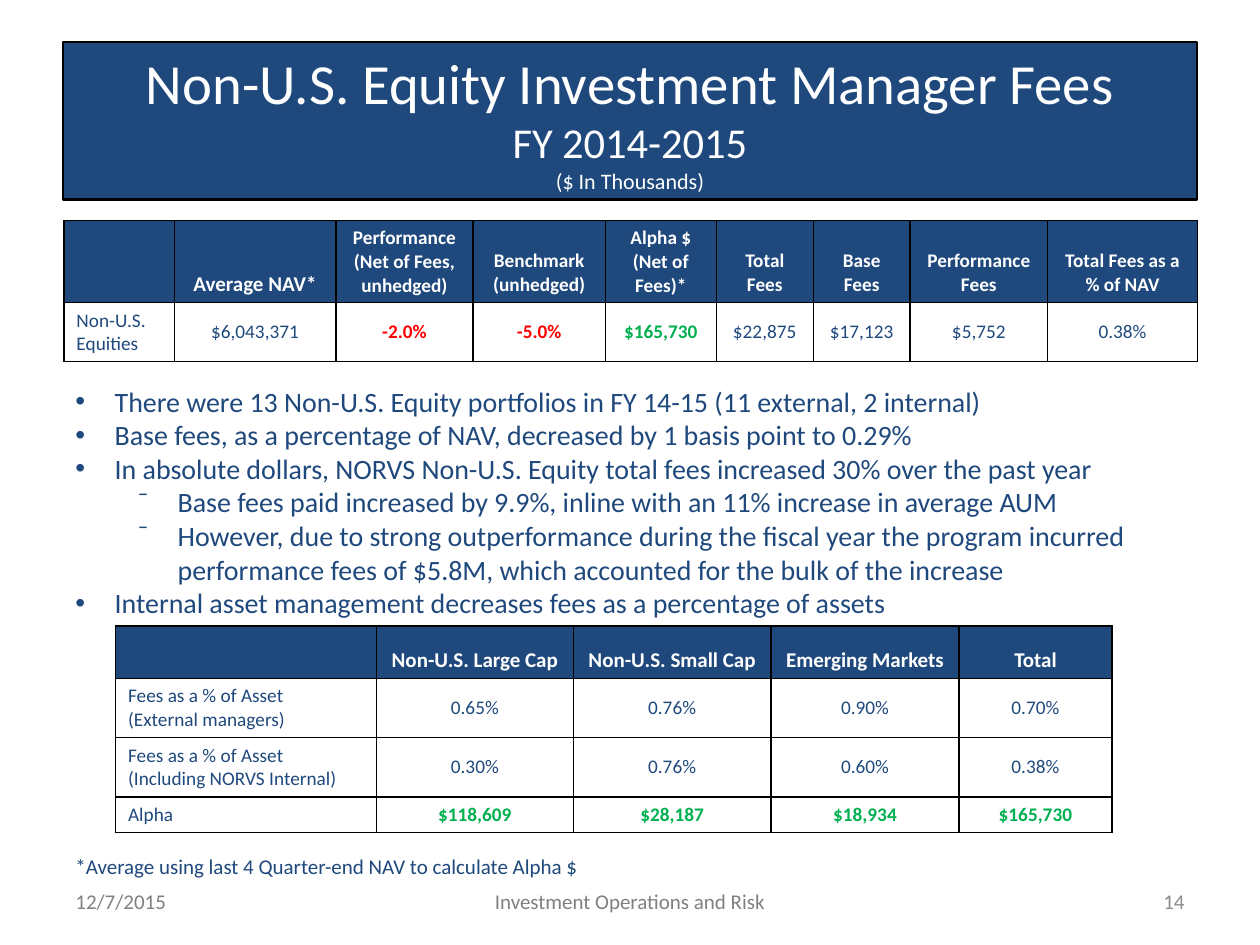
from dataclasses import dataclass

from lxml import etree
from pptx import Presentation
from pptx.dml.color import RGBColor
from pptx.enum.shapes import MSO_SHAPE
from pptx.enum.text import MSO_ANCHOR, PP_ALIGN
from pptx.oxml.ns import qn
from pptx.util import Pt

LEFT, CENTER, RIGHT = PP_ALIGN.LEFT, PP_ALIGN.CENTER, PP_ALIGN.RIGHT
TOP, MIDDLE, BOTTOM = MSO_ANCHOR.TOP, MSO_ANCHOR.MIDDLE, MSO_ANCHOR.BOTTOM
RECTANGLE = MSO_SHAPE.RECTANGLE


@dataclass(frozen=True)
class Theme:
    font: str = "Calibri"
    navy: str = "1F497D"
    white: str = "FFFFFF"
    black: str = "000000"
    gray: str = "808080"
    light_gray: str = "8C8C8C"
    red: str = "FF0000"
    green: str = "00B050"
    title: float = 32.4
    subtitle: float = 24.3
    units: float = 12.6
    body: float = 16
    small: float = 12
    cell: float = 11


THEME = Theme()

TITLE_LINES = [
    ("Non-U.S. Equity Investment Manager Fees", THEME.title),
    ("FY 2014-2015", THEME.subtitle),
    ("($ In Thousands)", THEME.units),
]
BULLETS = [
    (0, "There were 13 Non-U.S. Equity portfolios in FY 14-15 (11 external, 2 internal)"),
    (0, "Base fees, as a percentage of NAV, decreased by 1 basis point to 0.29%"),
    (0, "In absolute dollars, NORVS Non-U.S. Equity total fees increased 30% over the past year"),
    (1, "Base fees paid increased by 9.9%, inline with an 11% increase in average AUM"),
    (1, "However, due to strong outperformance during the fiscal year the program incurred "
        "performance fees of $5.8M, which accounted for the bulk of the increase"),
    (0, "Internal asset management decreases fees as a percentage of assets"),
]
BULLET_LEVELS = [("•", 22.5), ("⁻", 58.5)]
BULLET_HANG = 22.5

MANAGER_FEES = [
    ["", "Average NAV*", "Performance (Net of Fees, unhedged)", "Benchmark (unhedged)",
     "Alpha $ (Net of Fees)*", "Total Fees", "Base Fees", "Performance Fees",
     "Total Fees as a % of NAV"],
    ["Non-U.S. Equities", "$6,043,371", "-2.0%", "-5.0%", "$165,730", "$22,875",
     "$17,123", "$5,752", "0.38%"],
]
FEES_BY_MARKET = [
    ["", "Non-U.S. Large Cap", "Non-U.S. Small Cap", "Emerging Markets", "Total"],
    ["Fees as a % of Asset\n(External managers)", "0.65%", "0.76%", "0.90%", "0.70%"],
    ["Fees as a % of Asset\n(Including NORVS Internal)", "0.30%", "0.76%", "0.60%", "0.38%"],
    ["Alpha", "$118,609", "$28,187", "$18,934", "$165,730"],
]


def set_all(target, values):
    for name, value in values.items():
        setattr(target, name, value)


def style_font(font, size, color, bold=False):
    set_all(font, {"name": THEME.font, "size": Pt(size), "bold": bold})
    font.color.rgb = RGBColor.from_string(color)


def fill_solid(target, color):
    target.fill.solid()
    target.fill.fore_color.rgb = RGBColor.from_string(color)


def add_span(para, text, size, color, bold=False):
    span = para.add_run()
    span.text = text
    style_font(span.font, size, color, bold)


def add_title(page):
    box = page.shapes.add_shape(RECTANGLE, Pt(36), Pt(24), Pt(648), Pt(90))
    box.shadow.inherit = False
    fill_solid(box, THEME.navy)
    box.line.color.rgb = RGBColor.from_string(THEME.black)
    box.line.width = Pt(1.5)
    box.text_frame.vertical_anchor = MIDDLE
    para = box.text_frame.paragraphs[0]
    para.alignment = CENTER
    for index, (text, size) in enumerate(TITLE_LINES):
        if index:
            para.add_line_break()
        add_span(para, text, size, THEME.white)


def add_text_box(page, left, top, width, height, anchor=MIDDLE):
    box = page.shapes.add_textbox(Pt(left), Pt(top), Pt(width), Pt(height))
    set_all(box.text_frame, {"word_wrap": True, "vertical_anchor": anchor})
    return box


def add_label(page, text, left, top, width, color, align=LEFT):
    box = add_text_box(page, left, top, width, 28.8)
    para = box.text_frame.paragraphs[0]
    para.alignment = align
    add_span(para, text, THEME.small, color)
    return box


def set_bullet(para, level):
    mark, indent = BULLET_LEVELS[level]
    para.level = level
    props = para._p.get_or_add_pPr()
    props.set("marL", str(Pt(indent)))
    props.set("indent", str(-Pt(BULLET_HANG)))
    etree.SubElement(props, qn("a:buFont"), typeface="Arial")
    etree.SubElement(props, qn("a:buChar"), char=mark)


def add_bullets(page):
    frame = add_text_box(page, 36, 216, 651, 143.3, TOP).text_frame
    for index, (level, text) in enumerate(BULLETS):
        para = frame.add_paragraph() if index else frame.paragraphs[0]
        set_bullet(para, level)
        add_span(para, text, THEME.body, THEME.navy)


def add_borders(cell):
    props = cell._tc.get_or_add_tcPr()
    for side in ("lnL", "lnR", "lnT", "lnB"):
        line = etree.SubElement(props, qn(f"a:{side}"), w=str(Pt(1)))
        fill = etree.SubElement(line, qn("a:solidFill"))
        etree.SubElement(fill, qn("a:srgbClr"), val=THEME.black)


def value_style(text, is_header):
    """Return the colour and weight that a cell's content calls for."""
    if is_header:
        return THEME.white, True
    if text.startswith("-"):
        return THEME.red, True
    return THEME.navy, False


def fill_cell(cell, text, size, color, bold, align, anchor, background):
    set_all(cell, {"margin_top": Pt(3.3), "margin_bottom": Pt(3.3),
                   "vertical_anchor": anchor})
    add_borders(cell)
    if background:
        fill_solid(cell, background)
    else:
        cell.fill.background()
    for index, line in enumerate(text.split("\n") if text else []):
        frame = cell.text_frame
        para = frame.add_paragraph() if index else frame.paragraphs[0]
        para.alignment = align
        add_span(para, line, size, color, bold)


def add_fee_table(page, rows, left, top, widths, heights, large_headers, alpha_cells,
                  label_anchor):
    frame = page.shapes.add_table(len(rows), len(widths), Pt(left), Pt(top),
                                  Pt(sum(widths)), Pt(sum(heights)))
    table = frame.table
    set_all(table, {"first_row": False, "horz_banding": False})
    for column, width in zip(table.columns, widths):
        column.width = Pt(width)
    for row, height in zip(table.rows, heights):
        row.height = Pt(height)
    for r, values in enumerate(rows):
        for c, text in enumerate(values):
            color, bold = value_style(text, r == 0)
            if (r, c) in alpha_cells:
                color, bold = THEME.green, True
            size = THEME.small if r == 0 and c in large_headers else THEME.cell
            align = CENTER if r == 0 or c else LEFT
            anchor = BOTTOM if r == 0 else MIDDLE if c else label_anchor
            background = THEME.navy if r == 0 else None
            fill_cell(table.cell(r, c), text, size, color, bold, align, anchor, background)


def main():
    deck = Presentation()
    set_all(deck, {"slide_width": Pt(720), "slide_height": Pt(540)})
    page = deck.slides.add_slide(deck.slide_layouts[6])
    add_title(page)
    add_label(page, "12/7/2015", 36, 500.5, 168, THEME.gray)
    add_label(page, "Investment Operations and Risk", 246, 500.5, 228, THEME.gray, CENTER)
    number = add_label(page, "14", 516, 500.5, 168, THEME.light_gray, RIGHT)
    fill_solid(number, THEME.white)
    add_bullets(page)
    add_label(page, "*Average using last 4 Quarter-end NAV to calculate Alpha $",
              36, 480.5, 384, THEME.navy)
    add_fee_table(page, MANAGER_FEES, 36.5, 126,
                  [63.2, 92.2, 78.5, 75.6, 63.4, 55.4, 55.4, 78.5, 85.8], [47, 33.6],
                  large_headers={1}, alpha_cells={(1, 4)}, label_anchor=MIDDLE)
    add_fee_table(page, FEES_BY_MARKET, 66, 357.8,
                  [149.2, 112.4, 113, 107.5, 87.3], [30, 33.8, 33.8, 20.4],
                  large_headers=range(1, 5), alpha_cells={(3, c) for c in range(1, 5)},
                  label_anchor=TOP)
    deck.save("out.pptx")


if __name__ == "__main__":
    main()
